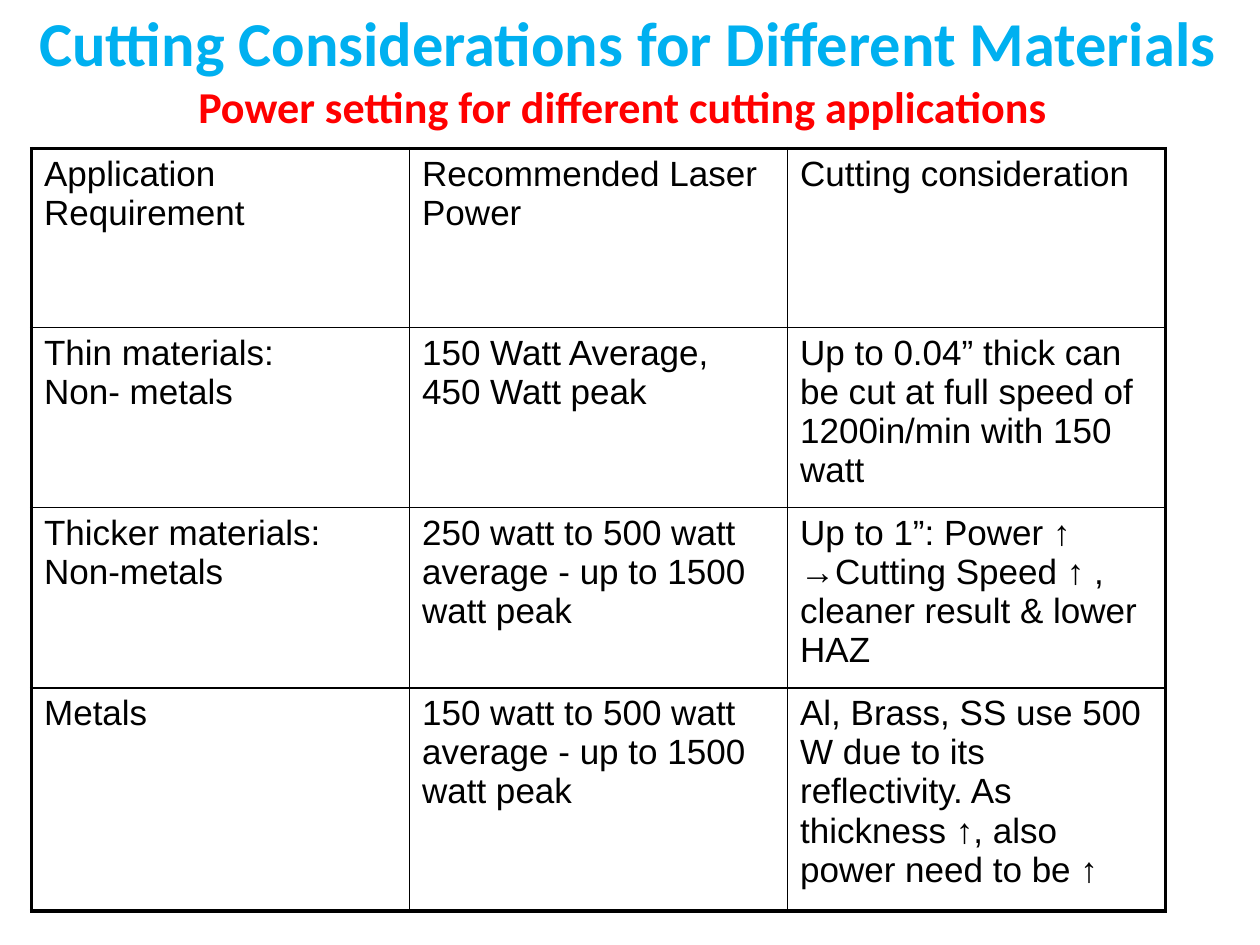
import pptx
import pptx.dml.color
import pptx.enum.text
import pptx.oxml
import pptx.oxml.ns
import pptx.util
from dataclasses import dataclass

Inches = pptx.util.Inches
Pt = pptx.util.Pt


@dataclass(frozen=True)
class Theme:
    title_color: str = "00B0F0"
    subtitle_color: str = "FF0000"
    ink: str = "000000"
    heading_font: str = "Calibri"
    body_font: str = "Arial"
    title_size: float = 35.7
    subtitle_size: float = 25.2
    body_size: float = 20
    outer_line: float = 2.25
    inner_line: float = 1


THEME = Theme()

COL_WIDTH = 3
ROW_HEIGHTS = [1.42, 1.43, 1.43, 1.77]
ROWS = [
    ["Application Requirement", "Recommended Laser Power", "Cutting consideration"],
    ["Thin materials: \nNon- metals",
     "150 Watt Average, 450 Watt peak",
     "Up to 0.04” thick can be cut at full speed of 1200in/min with 150 watt"],
    ["Thicker materials: \nNon-metals",
     "250 watt to 500 watt average - up to 1500 watt peak",
     "Up to 1”: Power ↑ →Cutting Speed ↑ , cleaner result & lower HAZ"],
    ["Metals",
     "150 watt to 500 watt average - up to 1500 watt peak",
     "Al, Brass, SS use 500 W due to its reflectivity. As thickness ↑, "
     "also power need to be ↑"],
]


def write_text(p, text, *, font, size, color, bold=False, align=None):
    """Fill a paragraph; a newline becomes a line break."""
    p.text = text
    p.alignment = align
    for r in p.runs:
        r.font.name = font
        r.font.size = Pt(size)
        r.font.bold = bold
        r.font.color.rgb = pptx.dml.color.RGBColor.from_string(color)


def set_borders(cell, widths):
    """Draw cell borders; widths maps L, R, T, B to points, in that order."""
    tcPr = cell._tc.get_or_add_tcPr()
    for i, (side, width) in enumerate(widths.items()):
        tcPr.insert(i, pptx.oxml.parse_xml(
            f'<a:ln{side} {pptx.oxml.ns.nsdecls("a")} w="{Pt(width)}">'
            f'<a:solidFill><a:srgbClr val="{THEME.ink}"/></a:solidFill></a:ln{side}>'))


def add_power_table(s):
    n_rows, n_cols = len(ROWS), len(ROWS[0])
    table = s.shapes.add_table(
        n_rows, n_cols, Inches(0.25), Inches(1.18),
        Inches(COL_WIDTH * n_cols), Inches(sum(ROW_HEIGHTS))).table
    table.first_row = table.horz_banding = False
    for col in table.columns:
        col.width = Inches(COL_WIDTH)
    for row, height in zip(table.rows, ROW_HEIGHTS):
        row.height = Inches(height)

    for i, texts in enumerate(ROWS):
        for j, text in enumerate(texts):
            cell = table.cell(i, j)
            cell.fill.background()
            write_text(cell.text_frame.paragraphs[0], text, font=THEME.body_font,
                       size=THEME.body_size, color=THEME.ink)
            # Heavy lines on the outside of the table, thin ones within
            on_edge = {"L": j == 0, "R": j == n_cols - 1,
                       "T": i == 0, "B": i == n_rows - 1}
            set_borders(cell, {side: THEME.outer_line if edge else THEME.inner_line
                               for side, edge in on_edge.items()})


def add_heading(s):
    tf = s.shapes.add_textbox(Inches(-0.02), Inches(0.08),
                              Inches(10), Inches(0.92)).text_frame
    tf.word_wrap = True
    tf.vertical_anchor = pptx.enum.text.MSO_ANCHOR.MIDDLE
    style = dict(font=THEME.heading_font, bold=True,
                 align=pptx.enum.text.PP_ALIGN.CENTER)
    write_text(tf.paragraphs[0], "Cutting Considerations for Different Materials",
               size=THEME.title_size, color=THEME.title_color, **style)
    write_text(tf.add_paragraph(), "Power setting for different cutting applications ",
               size=THEME.subtitle_size, color=THEME.subtitle_color, **style)


def main():
    prs = pptx.Presentation()
    prs.slide_width, prs.slide_height = Inches(10), Inches(7.5)
    s = prs.slides.add_slide(prs.slide_layouts[6])
    # Table first, heading in front of it
    add_power_table(s)
    add_heading(s)
    prs.save("out.pptx")


if __name__ == "__main__":
    main()
